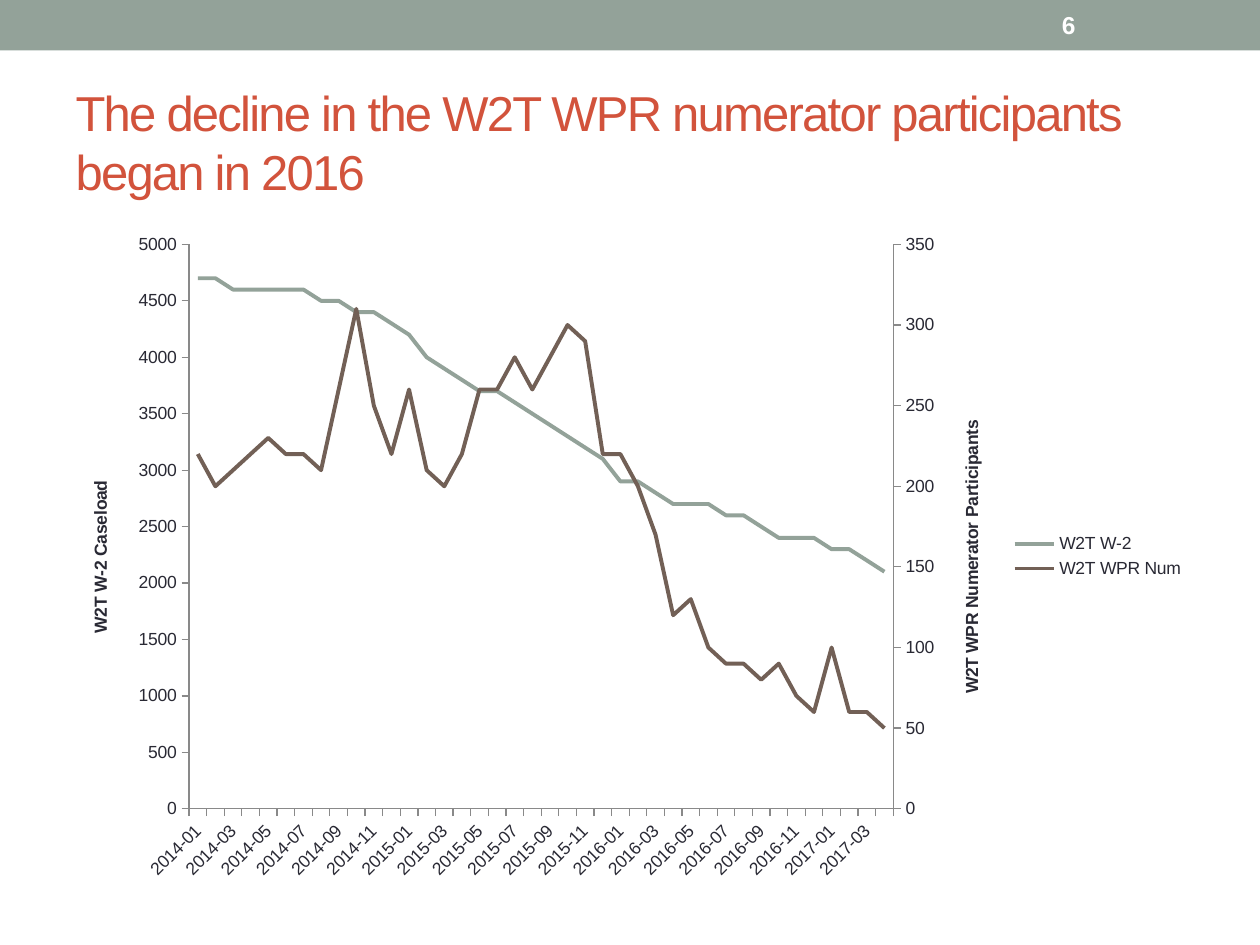
from copy import deepcopy
from dataclasses import dataclass

from lxml import etree
from pptx import Presentation
from pptx.chart.data import CategoryChartData
from pptx.dml.color import RGBColor
from pptx.enum.chart import XL_CHART_TYPE as ChartType
from pptx.enum.chart import XL_LEGEND_POSITION as LegendSide
from pptx.enum.chart import XL_TICK_MARK as Tick
from pptx.enum.shapes import MSO_SHAPE as Preset
from pptx.enum.text import MSO_ANCHOR as Anchor
from pptx.enum.text import PP_ALIGN as Align
from pptx.oxml.ns import qn
from pptx.util import Inches, Pt


@dataclass(frozen=True)
class Theme:
    font: str = "Arial"
    sage: str = "93A299"
    brown: str = "726056"
    rust: str = "D2533C"
    ink: str = "292934"
    axis: str = "898989"
    white: str = "FFFFFF"
    title_size: int = 28
    number_size: int = 14
    chart_size: int = 10
    line_width: float = 2.25


THEME = Theme()
MONTHS = [f"{year}-{month:02d}" for year in range(2014, 2018)
          for month in range(1, 13)][:40]
CASELOAD = [
    4700, 4700, 4600, 4600, 4600, 4600, 4600, 4500, 4500, 4400,
    4400, 4300, 4200, 4000, 3900, 3800, 3700, 3700, 3600, 3500,
    3400, 3300, 3200, 3100, 2900, 2900, 2800, 2700, 2700, 2700,
    2600, 2600, 2500, 2400, 2400, 2400, 2300, 2300, 2200, 2100]
PARTICIPANTS = [
    220, 200, 210, 220, 230, 220, 220, 210, 260, 310,
    250, 220, 260, 210, 200, 220, 260, 260, 280, 260,
    280, 300, 290, 220, 220, 200, 170, 120, 130, 100,
    90, 90, 80, 90, 70, 60, 100, 60, 60, 50]


def color(value):
    return RGBColor.from_string(value)


def style_font(font, size, fill, bold=False):
    font.name, font.size, font.bold = THEME.font, Pt(size), bold
    font.color.rgb = color(fill)


def write(frame, text, size, fill, bold=False, spacing=None):
    """Put one formatted line of text into a text frame."""
    frame.word_wrap = True
    frame.vertical_anchor = Anchor.MIDDLE
    para = frame.paragraphs[0]
    para.alignment = Align.LEFT
    span = para.add_run()
    span.text = text
    style_font(span.font, size, fill, bold)
    if spacing is not None:
        span.font._element.set("spc", str(int(spacing * 100)))


def add_band(page, left, top, width, height):
    """Top band with the slide number near its right end."""
    band = page.shapes.add_shape(Preset.RECTANGLE, left, top, width, height)
    band.shadow.inherit = False
    band.fill.solid()
    band.fill.fore_color.rgb = color(THEME.sage)
    band.line.fill.background()
    box = page.shapes.add_textbox(left + Inches(8.33), top + Inches(0.02),
                                  Inches(1.17), Inches(0.36))
    write(box.text_frame, "6", THEME.number_size, THEME.white, bold=True)


def add_title(page, left, top, width, height):
    title = page.shapes.title
    title.left, title.top, title.width, title.height = left, top, width, height
    write(title.text_frame,
          "The decline in the W2T WPR numerator participants began in 2016",
          THEME.title_size, THEME.rust, spacing=-1)


def set_child(parent, tag, value):
    parent.find(qn(tag)).set("val", str(value))


def style_axis(axis):
    axis.has_major_gridlines = False
    axis.major_tick_mark, axis.minor_tick_mark = Tick.OUTSIDE, Tick.NONE
    axis.format.line.color.rgb = color(THEME.axis)
    axis.format.line.width = Pt(0.75)
    style_font(axis.tick_labels.font, THEME.chart_size, THEME.ink)


def style_value_axis(axis, title, top_value, step):
    axis.minimum_scale, axis.maximum_scale, axis.major_unit = 0, top_value, step
    frame = axis.axis_title.text_frame
    frame.text = title
    style_font(frame.paragraphs[0].runs[0].font, THEME.chart_size, THEME.ink, True)
    body = frame._txBody.find(qn("a:bodyPr"))
    body.set("rot", "-5400000")
    body.set("vert", "horz")


def move_to_right_axis(chart, title, top_value, step):
    """Give the last series its own line plot and value axis."""
    left_axis = chart.value_axis._element
    left_plot = chart.plots[0]._element
    month_axis = chart.category_axis._element
    ids = {axis.find(qn("c:axId")).get("val"): new_id
           for axis, new_id in ((month_axis, "50010"), (left_axis, "50020"))}

    right_plot = deepcopy(left_plot)
    right_plot.remove(right_plot.findall(qn("c:ser"))[0])
    left_plot.remove(left_plot.findall(qn("c:ser"))[-1])
    left_plot.addnext(right_plot)

    hidden_months, right_axis = deepcopy(month_axis), deepcopy(left_axis)
    left_axis.addnext(right_axis)
    right_axis.addnext(hidden_months)
    for part in (right_plot, hidden_months, right_axis):
        for tag in ("c:axId", "c:crossAx"):
            for node in part.findall(qn(tag)):
                node.set("val", ids[node.get("val")])
    set_child(hidden_months, "c:delete", 1)
    set_child(right_axis, "c:axPos", "r")
    set_child(right_axis, "c:crosses", "max")
    style_value_axis(type(chart.value_axis)(right_axis), title, top_value, step)


def place_plot(chart, x, y, w, h):
    """Fix the inner plot area, in fractions of the chart."""
    area = chart._chartSpace.chart.plotArea
    for old in area.findall(qn("c:layout")):
        area.remove(old)
    layout = etree.Element(qn("c:layout"))
    manual = etree.SubElement(layout, qn("c:manualLayout"))
    settings = [("layoutTarget", "inner"), ("xMode", "edge"), ("yMode", "edge"),
                ("x", x), ("y", y), ("w", w), ("h", h)]
    for tag, value in settings:
        etree.SubElement(manual, qn(f"c:{tag}")).set("val", str(value))
    area.insert(0, layout)


def add_trend_chart(page, left, top, width, height):
    data = CategoryChartData()
    data.categories = MONTHS
    data.add_series("W2T W-2", CASELOAD)
    data.add_series("W2T WPR Num", PARTICIPANTS)
    chart = page.shapes.add_chart(ChartType.LINE, left, top, width, height, data).chart
    chart.has_title = False
    style_font(chart.font, THEME.chart_size, THEME.ink)

    # Series
    plot = chart.plots[0]
    plot.vary_by_categories = False
    for series, shade in zip(plot.series, (THEME.sage, THEME.brown)):
        series.smooth = False
        series.format.line.color.rgb = color(shade)
        series.format.line.width = Pt(THEME.line_width)

    # Axes
    months = chart.category_axis
    for axis in (months, chart.value_axis):
        style_axis(axis)
    months._element.find(qn("c:txPr")).find(qn("a:bodyPr")).set("rot", "-2700000")
    skip = etree.Element(qn("c:tickLblSkip"), val="2")
    months._element.find(qn("c:noMultiLvlLbl")).addprevious(skip)
    style_value_axis(chart.value_axis, "W2T W-2 Caseload", 5000, 500)
    move_to_right_axis(chart, "W2T WPR Numerator Participants", 350, 50)
    place_plot(chart, Inches(1) / width, Inches(0.19) / height,
               Inches(5.59) / width, Inches(4.48) / height)

    # Legend
    chart.has_legend = True
    chart.legend.position = LegendSide.RIGHT
    chart.legend.include_in_layout = False
    style_font(chart.legend.font, THEME.chart_size, THEME.ink)


def main():
    deck = Presentation()
    deck.slide_width, deck.slide_height = Inches(10), Inches(7.5)
    page = deck.slides.add_slide(deck.slide_layouts[5])
    add_band(page, 0, 0, deck.slide_width, Inches(0.4))
    add_title(page, Inches(0.5), Inches(0.58), Inches(9), Inches(1.08))
    add_trend_chart(page, Inches(0.5), Inches(1.75), Inches(9), Inches(5.33))
    deck.save("out.pptx")


if __name__ == "__main__":
    main()
